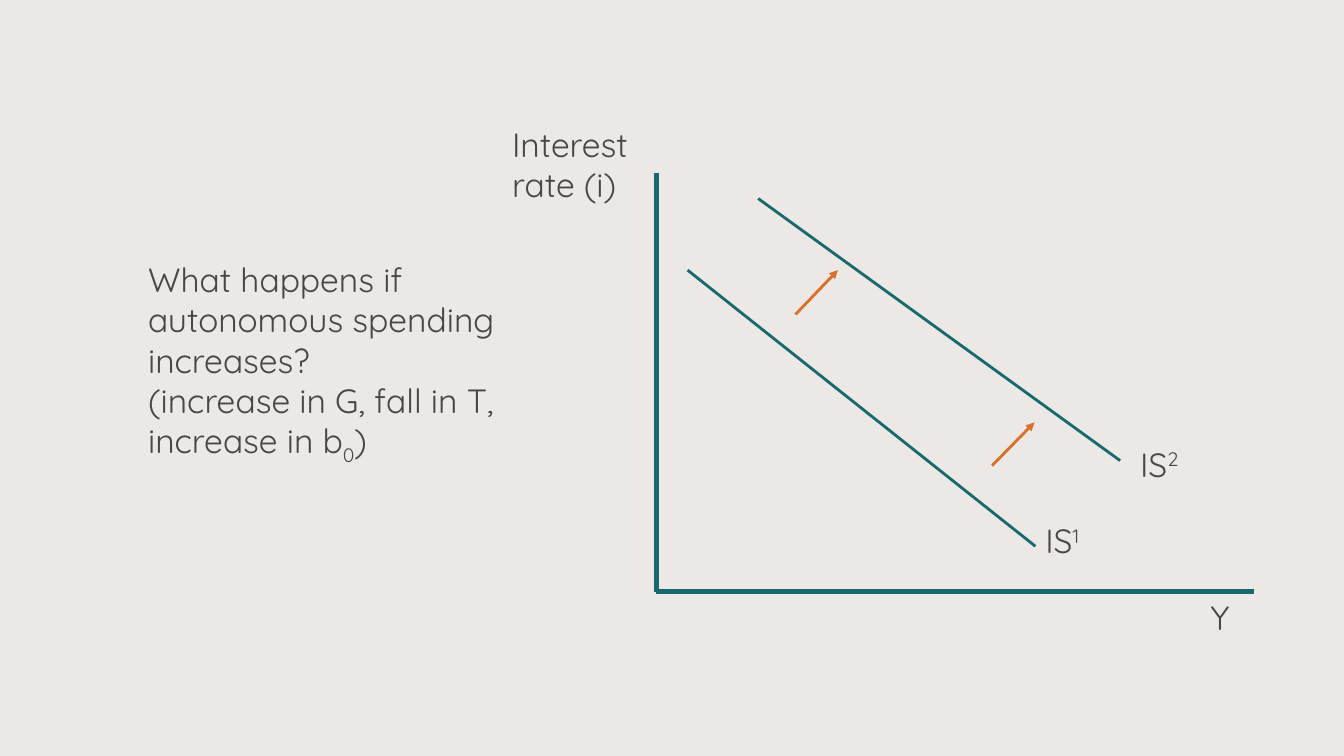
import lxml.etree
import pptx
import pptx.dml.color
import pptx.enum.shapes
import pptx.enum.text
import pptx.oxml.ns
import pptx.util

PX = 9144  # 100 px to the inch
TEAL, ORANGE, INK, PAPER = "18696D", "DB7028", "494644", "EBE8E5"


def color(hex_value):
    return pptx.dml.color.RGBColor.from_string(hex_value)


def sub_element(parent, tag, **attributes):
    return lxml.etree.SubElement(parent, pptx.oxml.ns.qn(tag), **attributes)


deck = pptx.Presentation()
deck.slide_width = 1333 * PX
deck.slide_height = 750 * PX
slide = deck.slides.add_slide(deck.slide_layouts[6])
slide.background.fill.solid()
slide.background.fill.fore_color.rgb = color(PAPER)

# Axes, IS curves and shift arrows: start, end, colour, width, arrowhead
diagram_lines = [
    (651, 172, 651, 587, TEAL, 4, False),
    (1244, 587, 651, 587, TEAL, 4, False),
    (682, 268, 1027, 542, TEAL, 2, False),
    (752, 197, 1111, 457, TEAL, 2, False),
    (789, 312, 831, 268, ORANGE, 2, True),
    (984, 462, 1026, 419, ORANGE, 2, True),
]
for x1, y1, x2, y2, stroke, width, arrowhead in diagram_lines:
    segment = slide.shapes.add_connector(
        pptx.enum.shapes.MSO_CONNECTOR.STRAIGHT, x1 * PX, y1 * PX, x2 * PX, y2 * PX)
    segment.line.color.rgb = color(stroke)
    segment.line.width = pptx.util.Pt(width)
    if arrowhead:
        sub_element(segment.line._get_or_add_ln(), "a:tailEnd", type="triangle")
    sub_element(segment._element.spPr, "a:effectLst")

# Each label: left, top, width, height, paragraphs of (text, baseline shift in %)
labels = [
    (137, 252, 415, 212, [
        [("What happens if autonomous spending increases?", 0)],
        [("(increase in G, fall in T, increase in b", 0), ("0", -25), (")", 0)],
    ]),
    (498, 118, 199, 91, [[("Interest rate (i)", 0)]]),
    (1191, 587, 87, 50, [[("Y", 0)]]),
    (1027, 511, 100, 50, [[("IS", 0), ("1", 30)]]),
    (1121, 435, 100, 50, [[("IS", 0), ("2", 30)]]),
]
for left, top, width, height, paragraphs in labels:
    frame = slide.shapes.add_textbox(left * PX, top * PX, width * PX, height * PX).text_frame
    frame.word_wrap = True
    frame.auto_size = pptx.enum.text.MSO_AUTO_SIZE.SHAPE_TO_FIT_TEXT
    for index, pieces in enumerate(paragraphs):
        paragraph = frame.add_paragraph() if index else frame.paragraphs[0]
        paragraph.font.name = "Quicksand"
        paragraph.font.size = pptx.util.Pt(24)
        paragraph.font.color.rgb = color(INK)
        for text, shift in pieces:
            run = paragraph.add_run()
            run.text = text
            if shift:
                run.font._element.set("baseline", str(shift * 1000))

deck.save("out.pptx")
